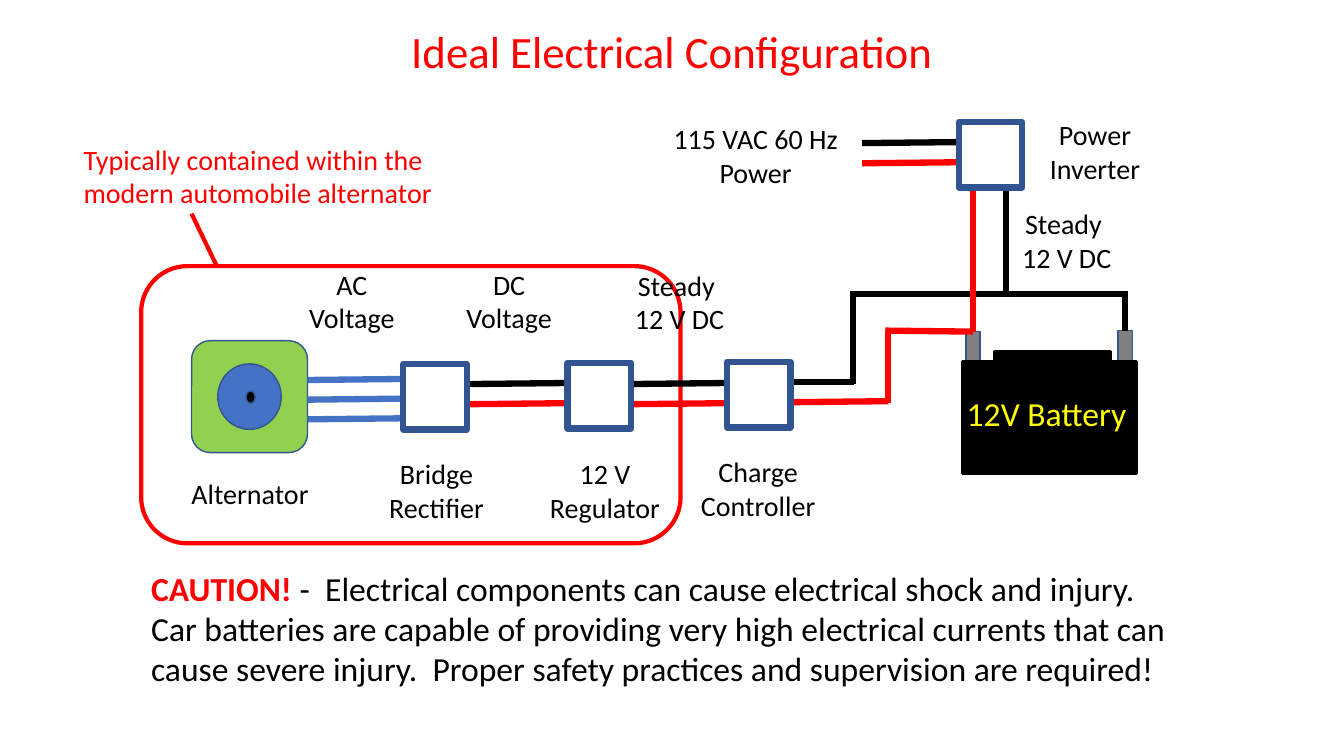
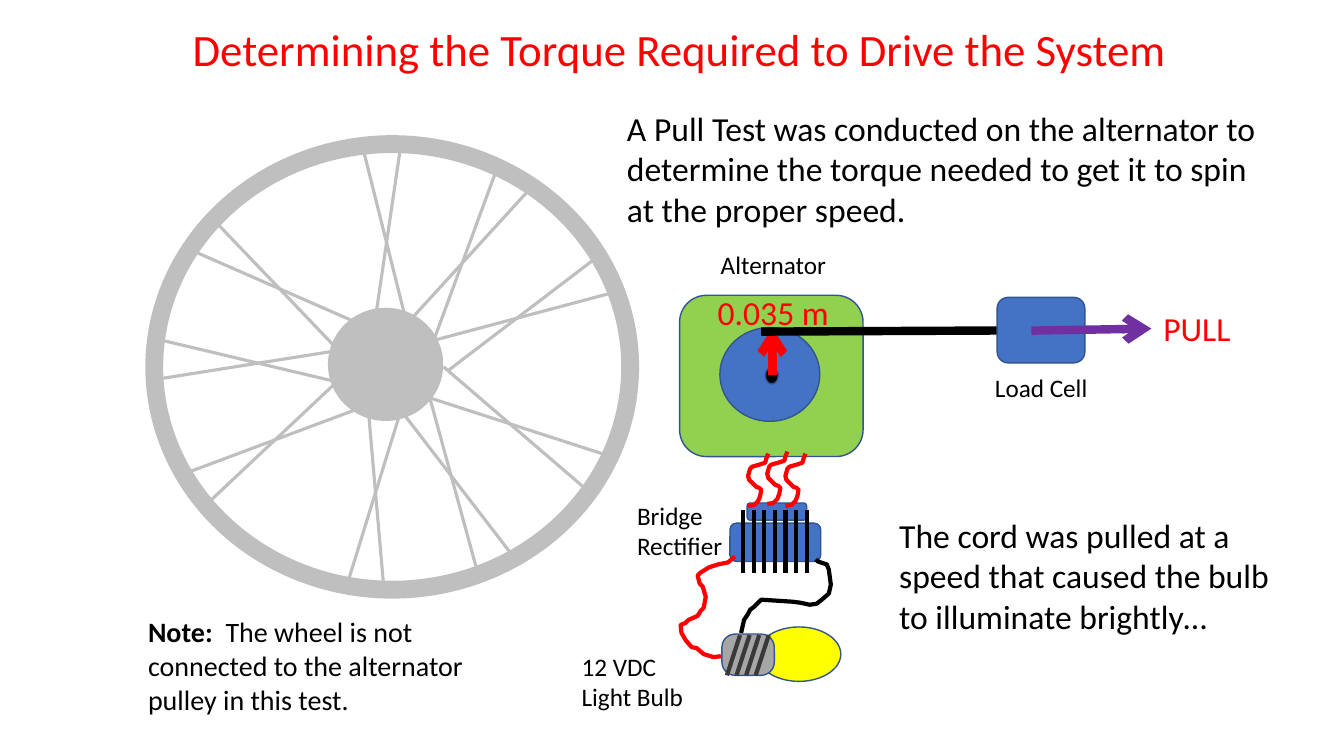
from lxml.etree import SubElement
from pptx import Presentation
from pptx.dml.color import RGBColor
from pptx.enum.shapes import MSO_CONNECTOR, MSO_SHAPE
from pptx.enum.text import MSO_ANCHOR, MSO_AUTO_SIZE, PP_ALIGN
from pptx.oxml.ns import qn
from pptx.util import Inches, Pt

BLACK = RGBColor(0x00, 0x00, 0x00)
RED = RGBColor(0xFF, 0x00, 0x00)
YELLOW = RGBColor(0xFF, 0xFF, 0x00)
GREEN = RGBColor(0x92, 0xD0, 0x50)
BLUE = RGBColor(0x44, 0x72, 0xC4)
OUTLINE = RGBColor(0x32, 0x54, 0x91)
PURPLE = RGBColor(0x70, 0x30, 0xA0)
LIGHT_GRAY = RGBColor(0xBF, 0xBF, 0xBF)
SILVER = RGBColor(0xA6, 0xA6, 0xA6)
GRAY = RGBColor(0x80, 0x80, 0x80)
CHARCOAL = RGBColor(0x3B, 0x38, 0x38)

FONT = "Calibri"
LABEL, SMALL, BODY, HEADING = 20, 18, 24, 32
TOP, RIGHT_SIDE = 0, 3

RECTANGLE = MSO_SHAPE.RECTANGLE
ROUNDED = MSO_SHAPE.ROUNDED_RECTANGLE
OVAL = MSO_SHAPE.OVAL


class Deck:
    def __init__(self):
        self.presentation = Presentation()
        self.presentation.slide_width = Inches(13.33)
        self.presentation.slide_height = Inches(7.5)
        self.slide = None

    def add_slide(self, title, box):
        self.slide = self.presentation.slides.add_slide(self.presentation.slide_layouts[5])
        placeholder = self.slide.shapes.title
        for name, length in zip(("left", "top", "width", "height"), box):
            setattr(placeholder, name, Inches(length))
        placeholder.text_frame.auto_size = MSO_AUTO_SIZE.NONE
        placeholder.text_frame.vertical_anchor = MSO_ANCHOR.MIDDLE
        self.fill_frame(placeholder.text_frame, [title], HEADING, RED, PP_ALIGN.CENTER)

    def fill_frame(self, frame, paragraphs, size, color, align):
        """Fill a frame; a paragraph is a string or a list of (text, font values)."""
        for index, content in enumerate(paragraphs):
            paragraph = frame.paragraphs[0] if index == 0 else frame.add_paragraph()
            paragraph.alignment = align
            runs = [(content, {})] if isinstance(content, str) else content
            for text, changes in runs:
                run = paragraph.add_run()
                run.text = text
                values = {"name": FONT, "size": Pt(size), "color": color, **changes}
                run.font.color.rgb = values.pop("color")
                for name, value in values.items():
                    setattr(run.font, name, value)

    def text(self, box, *paragraphs, size=LABEL, color=BLACK, align=PP_ALIGN.LEFT):
        frame = self.slide.shapes.add_textbox(*map(Inches, box)).text_frame
        frame.word_wrap = True
        frame.auto_size = MSO_AUTO_SIZE.SHAPE_TO_FIT_TEXT
        self.fill_frame(frame, paragraphs, size, color, align)

    def label(self, left, top, *paragraphs, width=1.74, height=0.77):
        self.text((left, top, width, height), *paragraphs, align=PP_ALIGN.CENTER)

    def style(self, shape, fill, line, width):
        shape.shadow.inherit = False
        if fill is None:
            shape.fill.background()
        else:
            shape.fill.solid()
            shape.fill.fore_color.rgb = fill
        shape.line.color.rgb = line
        shape.line.width = Pt(width)
        return shape

    def shape(self, kind, box, fill=None, line=OUTLINE, width=1):
        shape = self.slide.shapes.add_shape(kind, *map(Inches, box))
        return self.style(shape, fill, line, width)

    def line(self, start, end, color=BLACK, width=4.5, arrow=False):
        connector = self.slide.shapes.add_connector(
            MSO_CONNECTOR.STRAIGHT, *map(Inches, (*start, *end)))
        connector.line.color.rgb = color
        connector.line.width = Pt(width)
        properties = connector.element.spPr
        if arrow:
            SubElement(properties.find(qn("a:ln")), qn("a:tailEnd"), type="arrow")
        SubElement(properties, qn("a:effectLst"))
        return connector

    def wire(self, points, color, width=3):
        """Draw an open, flexible wire through the points."""
        start, *others = [(Inches(x), Inches(y)) for x, y in points]
        builder = self.slide.shapes.build_freeform(*start)
        builder.add_line_segments(others, close=False)
        self.style(builder.convert_to_shape(), None, color, width)

    def alternator(self, body, pulley, shaft):
        self.shape(ROUNDED, body, GREEN)
        self.shape(OVAL, pulley, BLUE)
        self.shape(OVAL, shaft, BLACK)


def build_configuration(deck):
    deck.add_slide("Ideal Electrical Configuration", (3.23, 0.18, 6.87, 0.64))
    deck.shape(ROUNDED, (1.4, 2.64, 5.35, 2.75), line=RED, width=3)
    deck.text((0.73, 1.36, 4.05, 0.77),
              "Typically contained within the modern automobile alternator", color=RED)
    deck.line((2.15, 2.64), (1.9, 2.12), RED, 3)
    deck.alternator((1.9, 3.38, 1.15, 1.11), (2.16, 3.61, 0.63, 0.65),
                    (2.44, 3.88, 0.09, 0.12))

    # Battery
    negative = deck.shape(RECTANGLE, (11.09, 3.28, 0.14, 0.31), GRAY)
    positive = deck.shape(RECTANGLE, (9.58, 3.29, 0.14, 0.31), GRAY)
    for box in ((9.55, 3.59, 1.72, 1.11), (9.86, 3.49, 1.15, 0.12)):
        deck.shape(RECTANGLE, box, BLACK, BLACK, 2.25)
    deck.text((9.49, 3.85, 1.8, 0.5), "12V Battery", size=BODY, color=YELLOW)

    # Wiring
    for phase in range(3):
        y = 3.77 + 0.195 * phase
        deck.line((3.05, y), (3.98, y - 0.01), BLUE)
    for x, y in ((4.66, 3.81), (6.25, 3.81), (8.55, 1.42)):
        for color, drop in ((BLACK, 0), (RED, 0.2)):
            deck.line((x, y + drop), (x + 0.94, y + drop - 0.01), color)
    for start, end, color in (
        ((7.87, 3.79), (8.47, 3.79), BLACK),
        ((7.87, 3.99), (8.81, 3.98), RED),
        ((8.46, 3.81), (8.46, 2.89), BLACK),
        ((8.46, 2.92), (11.15, 2.92), BLACK),
        ((8.81, 4), (8.81, 3.28), RED),
        ((9.98, 1.86), (9.98, 2.92), BLACK),
    ):
        deck.line(start, end, color)
    deck.line((11.16, 2.89), (11.16, 3.28)).end_connect(negative, TOP)
    for end in ((8.78, 3.28), (9.65, 1.86)):
        deck.line((9.65, 3.29), end, RED).begin_connect(positive, TOP)

    # Components
    for left, top in ((4, 3.61), (5.63, 3.6), (7.21, 3.59), (9.51, 1.21)):
        deck.shape(RECTANGLE, (left, top, 0.63, 0.65), width=4.5)
    deck.label(1.61, 4.68, "Alternator", height=0.44)
    deck.label(3.46, 4.48, "Bridge Rectifier")
    deck.label(5.13, 4.48, "12 V Regulator")
    deck.label(6.65, 4.46, "Charge Controller")
    deck.label(9.99, 1.12, "Power", "Inverter")
    deck.label(6.53, 1.16, "115 VAC 60 Hz Power", width=1.93)
    deck.label(2.62, 2.6, "AC", "Voltage")
    deck.label(4.18, 2.6, "DC", "Voltage")
    for left, top in ((5.87, 2.61), (9.71, 2)):
        deck.label(left, top, "Steady ", "12 V DC")
    deck.text((1.4, 5.58, 10.29, 1.31), [
        ("CAUTION! ", {"color": RED, "bold": True}),
        ("-  Electrical components can cause electrical shock and injury.  "
         "Car batteries are capable of providing very high electrical currents "
         "that can cause severe injury.  Proper safety practices and supervision "
         "are required!", {}),
    ], size=BODY)


SPOKES = (
    ((4.4, 3.64), (5.82, 4.86)), ((4.24, 3.94), (6, 4.51)), ((4.25, 3.9), (4.74, 5.69)),
    ((3.96, 4.05), (5.09, 5.52)), ((3.98, 4.06), (3.43, 5.84)), ((3.65, 4.03), (3.81, 5.87)),
    ((3.71, 3.25), (3.98, 1.41)), ((4.04, 3.23), (3.59, 1.43)), ((4.01, 3.24), (5.26, 1.87)),
    ((4.29, 3.41), (4.93, 1.67)), ((4.29, 3.38), (6.09, 2.9)), ((4.44, 3.68), (5.91, 2.56)),
    ((3.54, 4.06), (1.8, 4.71)), ((3.36, 3.77), (2.01, 5.04)), ((3.39, 3.8), (1.58, 3.37)),
    ((3.4, 3.47), (1.57, 3.76)), ((3.37, 3.49), (2.08, 2.14)), ((3.56, 3.21), (1.87, 2.47)),
)
PHASE_WIRE = (
    (7.62, 4.5), (7.6, 4.55), (7.59, 4.59), (7.53, 4.61), (7.46, 4.63), (7.44, 4.65),
    (7.42, 4.72), (7.43, 4.76), (7.5, 4.83), (7.53, 4.84), (7.55, 4.86), (7.54, 4.92),
    (7.52, 4.97), (7.48, 5.01), (7.42, 5.02),
)
POSITIVE_WIRE = (
    (7.29, 5.52), (7.22, 5.58), (7.12, 5.6), (7.03, 5.63), (6.95, 5.68), (6.92, 5.71),
    (6.94, 5.79), (6.97, 5.82), (7, 5.92), (6.98, 6.03), (6.95, 6.06), (6.92, 6.11),
    (6.83, 6.15), (6.8, 6.18), (6.75, 6.2), (6.76, 6.28), (6.8, 6.35), (6.86, 6.42),
    (6.91, 6.43), (6.98, 6.49), (7.08, 6.52), (7.15, 6.51),
)
NEGATIVE_WIRE = (
    (7.35, 6.28), (7.38, 6.15), (7.42, 6.09), (7.44, 6.05), (7.48, 6.02), (7.55, 5.95),
    (7.86, 5.97), (7.94, 5.98), (8.03, 6), (8.1, 5.99), (8.15, 5.95), (8.22, 5.89),
    (8.24, 5.8), (8.22, 5.65), (8.2, 5.6), (8.11, 5.57), (8.09, 5.55),
)


def build_pull_test(deck):
    deck.add_slide("Determining the Torque Required to Drive the System",
                   (1.51, 0.16, 10.46, 0.64))

    # Wheel
    for start, end in SPOKES:
        deck.line(start, end, LIGHT_GRAY, 2.25)
    deck.shape(OVAL, (1.53, 1.43, 4.72, 4.42), line=LIGHT_GRAY, width=12.75)
    deck.shape(OVAL, (3.26, 3.06, 1.13, 1.11), LIGHT_GRAY, LIGHT_GRAY)

    # Alternator and bridge rectifier
    deck.alternator((6.74, 2.93, 1.82, 1.6), (7.14, 3.25, 0.99, 0.93),
                    (7.59, 3.64, 0.13, 0.17))
    for box in ((7.41, 4.99, 0.59, 0.17), (7.24, 5.19, 0.9, 0.38)):
        deck.shape(ROUNDED, box, BLUE)
    for fin in range(7):
        x = 7.37 + 0.105 * fin
        deck.line((x, 5.06), (x, 5.68), width=3)
    for across, down in ((0, 0), (0.19, -0.02), (0.37, 0)):
        deck.wire([(x + across, y + down) for x, y in PHASE_WIRE], RED)

    # Light bulb
    deck.shape(OVAL, (7.51, 6.22, 0.83, 0.54), YELLOW)
    socket = deck.shape(ROUNDED, (7.16, 6.29, 0.52, 0.41), SILVER)
    socket.adjustments[0] = 0.32
    for thread in range(4):
        x = 7.34 + 0.095 * thread
        deck.line((x, 6.3), (x - 0.13, 6.7), CHARCOAL, 3)
    deck.wire(POSITIVE_WIRE, RED)
    deck.wire(NEGATIVE_WIRE, BLACK)

    # Pulley radius, cord and load cell
    deck.line((7.66, 3.72), (7.66, 3.25), RED, 6, arrow=True)
    cord = deck.line((7.55, 3.29), (10.76, 3.27), width=6)
    load_cell = deck.shape(ROUNDED, (9.89, 2.95, 0.87, 0.65), BLUE)
    cord.end_connect(load_cell, RIGHT_SIDE)
    deck.line((10.23, 3.28), (11.42, 3.26), PURPLE, 6, arrow=True)

    for box, text in (
        ((5.67, 6.41, 1.39, 0.71), "12 VDC Light Bulb"),
        ((6.22, 4.91, 1.2, 0.71), "Bridge Rectifier"),
        ((7.05, 2.42, 1.42, 0.4), "Alternator"),
        ((9.77, 3.64, 1.2, 0.4), "Load Cell"),
    ):
        deck.text(box, text, size=SMALL)
    for box, text, color in (
        ((7.02, 2.85, 1.45, 0.5), "0.035 m", RED),
        ((11.44, 3.01, 0.97, 0.5), "PULL", RED),
        ((6.12, 1.02, 6.51, 1.31),
         "A Pull Test was conducted on the alternator to determine the torque "
         "needed to get it to spin at the proper speed.", BLACK),
        ((8.82, 5.06, 3.92, 1.31),
         "The cord was pulled at a speed that caused the bulb to illuminate brightly…",
         BLACK),
    ):
        deck.text(box, text, size=BODY, color=color)
    deck.text((1.37, 6.05, 3.36, 1.11), [
        ("Note:  ", {"bold": True}),
        ("The wheel is not connected to the alternator pulley in this test.", {}),
    ])


def main():
    deck = Deck()
    build_configuration(deck)
    build_pull_test(deck)
    deck.presentation.save("out.pptx")


if __name__ == "__main__":
    main()
